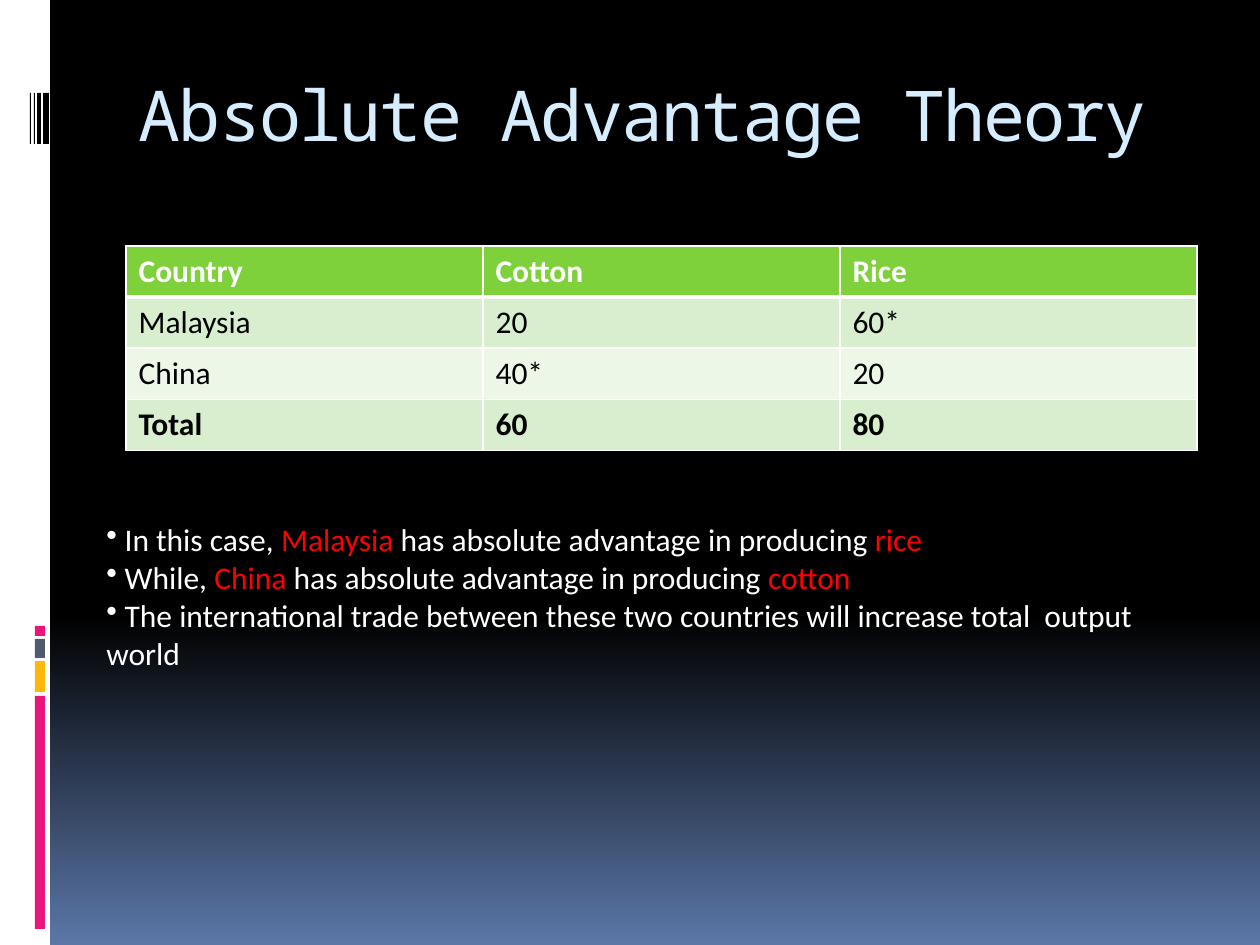
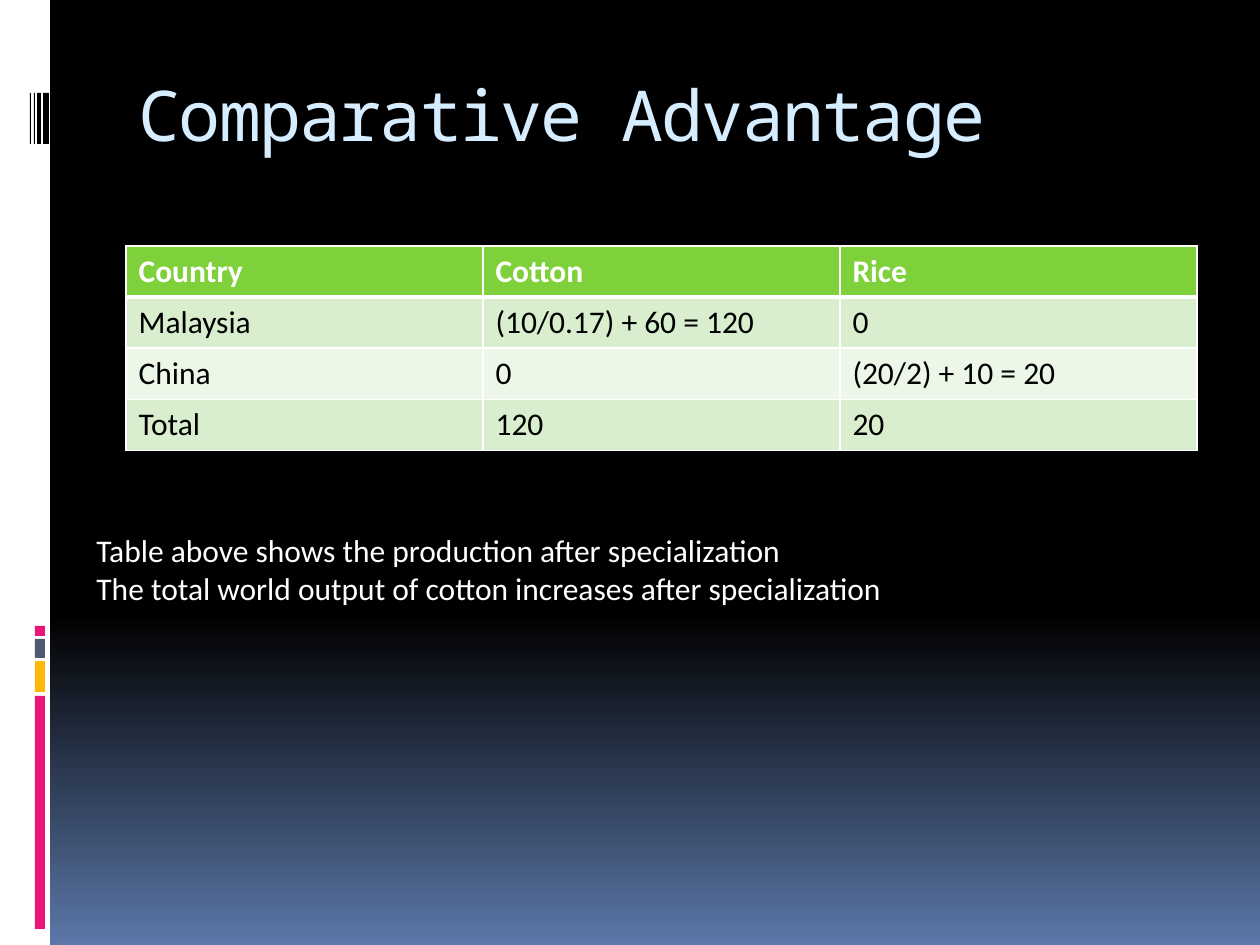
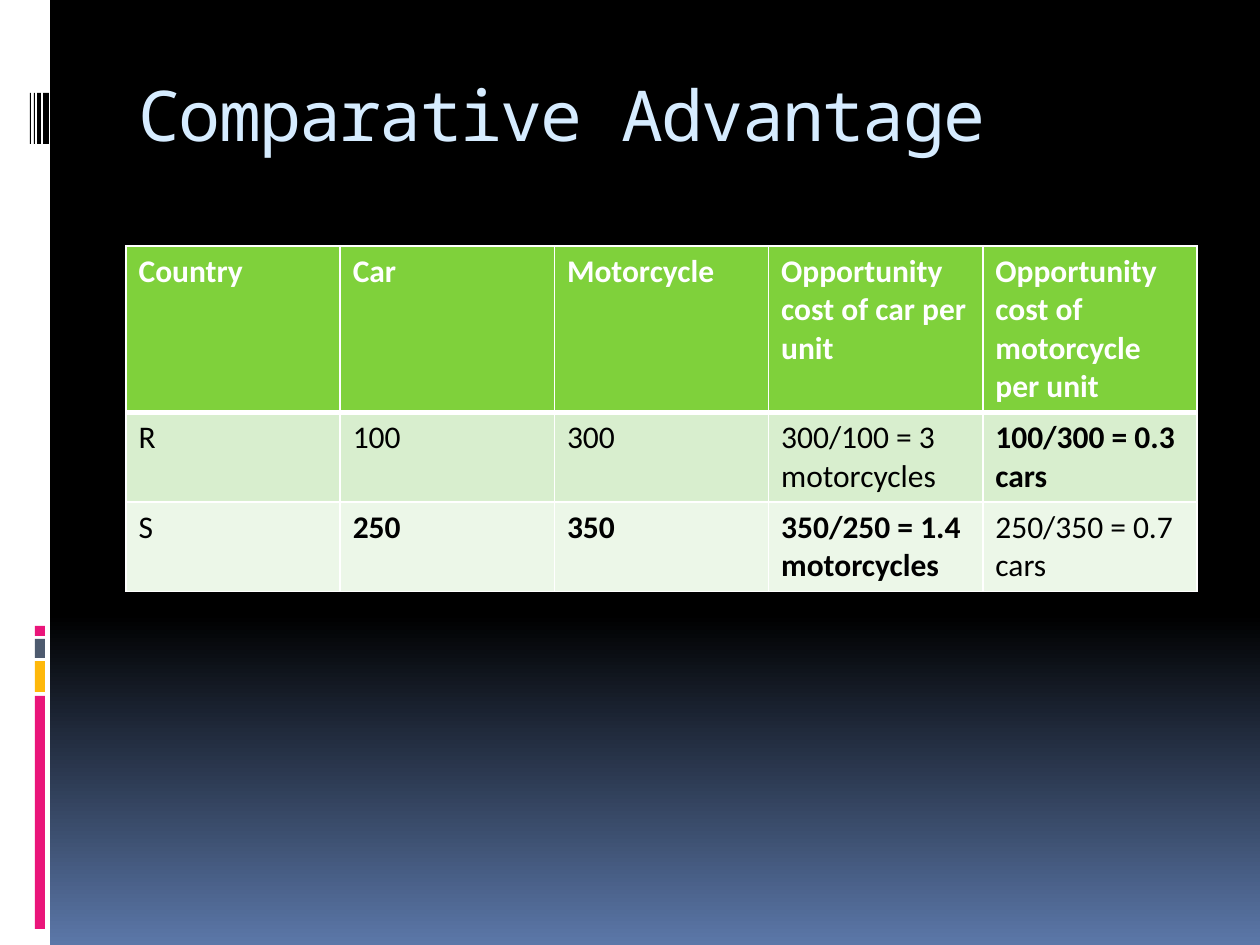
from copy import deepcopy

from lxml.etree import SubElement
from pptx import Presentation
from pptx.dml.color import RGBColor
from pptx.enum.shapes import MSO_SHAPE
from pptx.enum.text import MSO_ANCHOR, MSO_AUTO_SIZE, PP_ALIGN
from pptx.oxml.ns import qn
from pptx.util import Emu, Pt

COLORS = {
    "black": "000000", "white": "FFFFFF", "glow": "5B77A8", "title": "D6ECFF",
    "pink": "EA157A", "amber": "FEB80A", "slate": "4E5B6F", "red": "FF0000",
    "header": "7FD13B", "odd row": "D8EECE", "even row": "ECF7E8",
}
TITLE_FONT = {"name": "Noto Sans Mono", "size": Pt(40), "bold": False}
BODY_FONT = {"name": "Calibri", "size": Pt(18), "bold": False}

SLIDE_SIZE = (1260, 945)
TITLE_BOX = (126, 71, 1071, 126)
TABLE_LEFT, TABLE_TOP, TABLE_WIDTH, ROW_HEIGHT = 126, 246, 1071, 51
BACKGROUND_STOPS = [(0, "black"), (0.65, "black"), (1, "glow")]

SIDE_BAND = [("white", 0, 0, 50, 945)]
ACCENT_BARS = [
    (color, 35, top, 10, height)
    for color, top, height in [
        ("pink", 696, 233), ("amber", 661, 31), ("slate", 639, 19), ("pink", 626, 10),
    ]
]
BARCODE = [("black", left, 93, width, 51) for left, width in [(43, 6), (37, 4), (34, 1), (30, 1)]]

SLIDES = [
    {
        "title": "Absolute Advantage Theory",
        "table": [
            ["Country", "Cotton", "Rice"],
            ["Malaysia", "20", "60*"],
            ["China", "40*", "20"],
            ["Total", "60", "80"],
        ],
        "bold": {(3, 0), (3, 1), (3, 2)},
        "notes_box": (94, 514, 1081, 165),
        "bullet": "•",
        "notes": [
            [(" In this case, ", "white"), ("Malaysia", "red"),
             (" has absolute advantage in producing ", "white"), ("rice", "red")],
            [(" While, ", "white"), ("China", "red"),
             (" has absolute advantage in producing ", "white"), ("cotton", "red")],
            [(" The international trade between these two countries will increase "
              "total  output world", "white")],
        ],
    },
    {
        "title": "Comparative Advantage",
        "table": [
            ["Country", "Cotton", "Rice"],
            ["Malaysia", "(10/0.17) + 60 = 120", "0"],
            ["China", "0", "(20/2) + 10 = 20"],
            ["Total", "120", "20"],
        ],
        "bold": set(),
        "notes_box": (84, 525, 1092, 127),
        "bullet": None,
        "notes": [
            [("Table above shows the production after specialization", "white")],
            [("The total world output of cotton increases after specialization", "white")],
        ],
    },
    {
        "title": "Comparative Advantage",
        "table": [
            ["Country", "Car", "Motorcycle", "Opportunity cost of car per unit",
             "Opportunity cost of motorcycle per unit"],
            ["R", "100", "300", "300/100 = 3 motorcycles", "100/300 = 0.3 cars"],
            ["S", "250", "350", "350/250 = 1.4 motorcycles", "250/350 = 0.7 cars"],
        ],
        "bold": {(1, 4), (2, 1), (2, 2), (2, 3)},
        "notes": [],
    },
]


def px(length):
    return Emu(round(length * 914400 / 126))


def rgb(color):
    return RGBColor.from_string(COLORS[color])


def set_attributes(target, values):
    for name, value in values.items():
        setattr(target, name, value)


def add_run(paragraph, text, color, font_values):
    run = paragraph.add_run()
    run.text = text
    set_attributes(run.font, font_values)
    run.font.color.rgb = rgb(color)
    return run


def set_background(master):
    fill = master.background.fill
    fill.gradient()
    fill.gradient_angle = 270
    first_stop = next(master.element.iter(qn("a:gs")))
    first_stop.addnext(deepcopy(first_stop))
    for stop, (position, color) in zip(fill.gradient_stops, BACKGROUND_STOPS):
        stop.position = position
        stop.color.rgb = rgb(color)


def add_decoration(slide):
    for color, *box in SIDE_BAND + ACCENT_BARS + BARCODE:
        shape = slide.shapes.add_shape(MSO_SHAPE.RECTANGLE, *map(px, box))
        shape.shadow.inherit = False
        shape.fill.solid()
        shape.fill.fore_color.rgb = rgb(color)
        shape.line.fill.background()


def format_title(slide, text):
    title = slide.shapes.title
    set_attributes(title, dict(zip(("left", "top", "width", "height"), map(px, TITLE_BOX))))
    set_attributes(title.text_frame, {
        "vertical_anchor": MSO_ANCHOR.TOP, "margin_top": px(1),
        "auto_size": MSO_AUTO_SIZE.NONE, "word_wrap": True,
    })
    paragraph = title.text_frame.paragraphs[0]
    paragraph.alignment = PP_ALIGN.LEFT
    run = add_run(paragraph, text, "title", TITLE_FONT)
    run.font._element.set("spc", "-100")


def add_border(cell, side, points):
    line = SubElement(cell._tc.get_or_add_tcPr(), qn(f"a:ln{side}"), w=str(Pt(points)))
    fill = SubElement(line, qn("a:solidFill"))
    SubElement(fill, qn("a:srgbClr"), val=COLORS["white"])


def add_trade_table(slide, rows, bold_cells):
    box = (TABLE_LEFT, TABLE_TOP, TABLE_WIDTH, ROW_HEIGHT * len(rows))
    table = slide.shapes.add_table(len(rows), len(rows[0]), *map(px, box)).table
    for row_index, row in enumerate(rows):
        is_header = row_index == 0
        row_fill = "header" if is_header else "odd row" if row_index % 2 else "even row"
        thick_side = {0: "B", 1: "T"}.get(row_index)
        for column_index, text in enumerate(row):
            cell = table.cell(row_index, column_index)
            for side in "LRTB":
                add_border(cell, side, 3 if side == thick_side else 1)
            cell.fill.solid()
            cell.fill.fore_color.rgb = rgb(row_fill)
            bold = is_header or (row_index, column_index) in bold_cells
            add_run(cell.text_frame.paragraphs[0], text,
                    "white" if is_header else "black", BODY_FONT | {"bold": bold})


def add_notes_box(slide, box, paragraphs, bullet):
    frame = slide.shapes.add_textbox(*map(px, box)).text_frame
    set_attributes(frame, {"word_wrap": True, "auto_size": MSO_AUTO_SIZE.SHAPE_TO_FIT_TEXT})
    for index, runs in enumerate(paragraphs):
        paragraph = frame.add_paragraph() if index else frame.paragraphs[0]
        if bullet:
            SubElement(paragraph._p.get_or_add_pPr(), qn("a:buChar"), char=bullet)
        for text, color in runs:
            add_run(paragraph, text, color, BODY_FONT)


def main():
    """Build the trade advantage slides."""
    presentation = Presentation()
    presentation.slide_width, presentation.slide_height = map(px, SLIDE_SIZE)
    set_background(presentation.slide_master)
    for content in SLIDES:
        slide = presentation.slides.add_slide(presentation.slide_layouts[5])
        add_decoration(slide)
        format_title(slide, content["title"])
        add_trade_table(slide, content["table"], content["bold"])
        if content["notes"]:
            add_notes_box(slide, content["notes_box"], content["notes"], content["bullet"])
    presentation.save("out.pptx")


if __name__ == "__main__":
    main()
